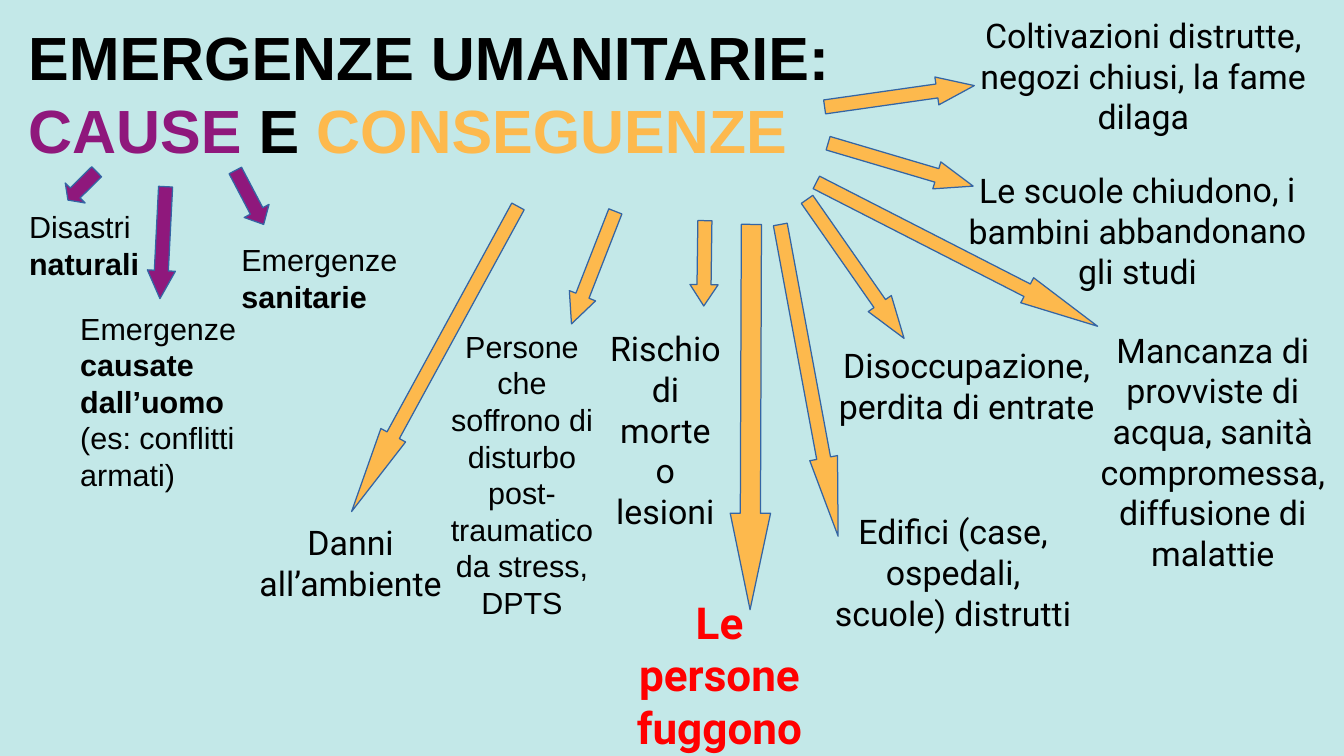
from pptx import Presentation
from pptx.dml.color import RGBColor
from pptx.enum.shapes import MSO_SHAPE as Shape
from pptx.enum.text import MSO_ANCHOR as Anchor, MSO_AUTO_SIZE as AutoSize, PP_ALIGN as Align
from pptx.util import Pt

BLACK, PURPLE, ORANGE, RED = "000000", "8F187C", "FDB94D", "FF0000"
BACKGROUND, OUTLINE = "C3E8E8", "3465A4"
TITLE_ONLY = 5

# Causes: frame, then spans as (text, bold)
CAUSES = [
    ((40.3, 179.3, 110.9, 148.3),
     [("Emergenze ", False), ("causate dall’uomo", True), (" (es: conflitti armati)", False)]),
    ((10.1, 119.5, 88.6, 47.5), [("Disastri ", False), ("naturali", True)]),
    ((135.4, 139, 108.7, 47.5), [("Emergenze ", False), ("sanitarie", True)]),
]

# Consequences: frame, text
CONSEQUENCES = [
    ((566.6, 5, 216.7, 87.8), "Coltivazioni distrutte, negozi chiusi, la fame dilaga"),
    ((141.8, 304.6, 130.3, 49), "Danni all’ambiente"),
    ((484.6, 200.2, 172.1, 57.6), "Disoccupazione, perdita di entrate"),
    ((638.6, 190.8, 154.8, 130.3),
     "Mancanza di provviste di acqua, sanità compromessa, diffusione di malattie"),
    ((351.4, 190.1, 82.8, 59.8), "Rischio di morte o lesioni"),
    ((483.8, 298.1, 157.7, 104.4), "Edifici (case, ospedali, scuole) distrutti"),
]

# Arrows before rotation: left, top, length, rotation
CAUSE_ARROWS = [
    (40.3, 97.9, 23.8, 45.3),
    (87.8, 110.2, 66.2, 2.9),
    (139, 98.6, 36, 332.3),
]
CONSEQUENCE_ARROWS = [
    (522.7, 12.2, 89.3, 261.9),
    (523.4, 52.6, 89.3, 286.5),
    (556.6, 56.9, 186.5, 297.1),
    (496.8, 108.7, 100.1, 325.1),
    (407.5, 130.3, 50.4, 0.8),
    (342, 122.4, 71.3, 21.3),
    (469.4, 131, 187.2, 349.5),
    (248.4, 109.4, 205.2, 28.6),
]


def color(hex_code):
    return RGBColor.from_string(hex_code)


class Board:
    """Holds the slide and the shared look of its elements."""

    def __init__(self, page):
        self.page = page
        self.arrow_width = 16.6
        page.background.fill.solid()
        page.background.fill.fore_color.rgb = color(BACKGROUND)

    def fit_frame(self, frame):
        frame.word_wrap = True
        frame.auto_size = AutoSize.NONE
        frame.vertical_anchor = Anchor.TOP
        frame.margin_left = frame.margin_right = Pt(7.2)
        frame.margin_top = frame.margin_bottom = Pt(3.6)

    def fill_para(self, para, spans, font, size, align):
        """Fills a paragraph with spans given as (text, bold, colour)."""
        para.alignment = align
        para.line_spacing = 1.0
        for text, bold, ink in spans:
            span = para.add_run()
            span.text = text
            span.font.name = font
            span.font.size = Pt(size)
            span.font.bold = bold
            span.font.color.rgb = color(ink)

    def title(self, frame, lines):
        box = self.page.shapes.title
        box.left, box.top, box.width, box.height = map(Pt, frame)
        text_frame = box.text_frame
        self.fit_frame(text_frame)
        for index, spans in enumerate(lines):
            para = text_frame.add_paragraph() if index else text_frame.paragraphs[0]
            bold_spans = [(text, True, ink) for text, ink in spans]
            self.fill_para(para, bold_spans, "Arial", 36, Align.LEFT)

    def label(self, frame, spans, font="Roboto", size=20, align=Align.CENTER, ink=BLACK, rotation=0):
        box = self.page.shapes.add_textbox(*map(Pt, frame))
        box.rotation = rotation
        self.fit_frame(box.text_frame)
        inked = [(text, bold, ink) for text, bold in spans]
        self.fill_para(box.text_frame.paragraphs[0], inked, font, size, align)

    def arrow(self, left, top, length, rotation, fill, width=None):
        """Draws a turned down arrow whose head takes a quarter of its length."""
        width = width or self.arrow_width
        arrow = self.page.shapes.add_shape(
            Shape.DOWN_ARROW, Pt(left), Pt(top), Pt(width), Pt(length))
        arrow.adjustments[0] = 0.5
        arrow.adjustments[1] = 0.25 * length / width
        arrow.rotation = rotation
        arrow.shadow.inherit = False
        arrow.fill.solid()
        arrow.fill.fore_color.rgb = color(fill)
        arrow.line.color.rgb = color(OUTLINE)
        arrow.line.width = Pt(0.75)


def main():
    deck = Presentation()
    deck.slide_width, deck.slide_height = Pt(793.4), Pt(446.4)
    board = Board(deck.slides.add_slide(deck.slide_layouts[TITLE_ONLY]))

    board.title((9.4, 7.9, 505.4, 87.8), [
        [("EMERGENZE UMANITARIE:", BLACK)],
        [("CAUSE ", PURPLE), ("E ", BLACK), ("CONSEGUENZE", ORANGE)],
    ])
    for frame, spans in CAUSES:
        board.label(frame, spans, "Arial", 18, Align.LEFT)
    for frame, text in CONSEQUENCES:
        board.label(frame, [(text, False)])
    board.label((256.3, 190.1, 103.7, 152.6),
                [("Persone che soffrono di disturbo post-traumatico da stress, DPTS", False)],
                "Arial", 18)
    board.label((560.9, 96.5, 221, 54.7),
                [("Le scuole chiudono, i bambini abbandonano gli studi", False)], rotation=359.8)
    board.label((359.3, 347.8, 131, 86.4), [("Le persone fuggono", True)], size=26, ink=RED)

    for arrow in CAUSE_ARROWS:
        board.arrow(*arrow, PURPLE)
    for arrow in CONSEQUENCE_ARROWS:
        board.arrow(*arrow, ORANGE)
    board.arrow(431.3, 132.5, 227.5, 0.2, ORANGE, width=23.8)

    deck.save("out.pptx")


if __name__ == "__main__":
    main()
